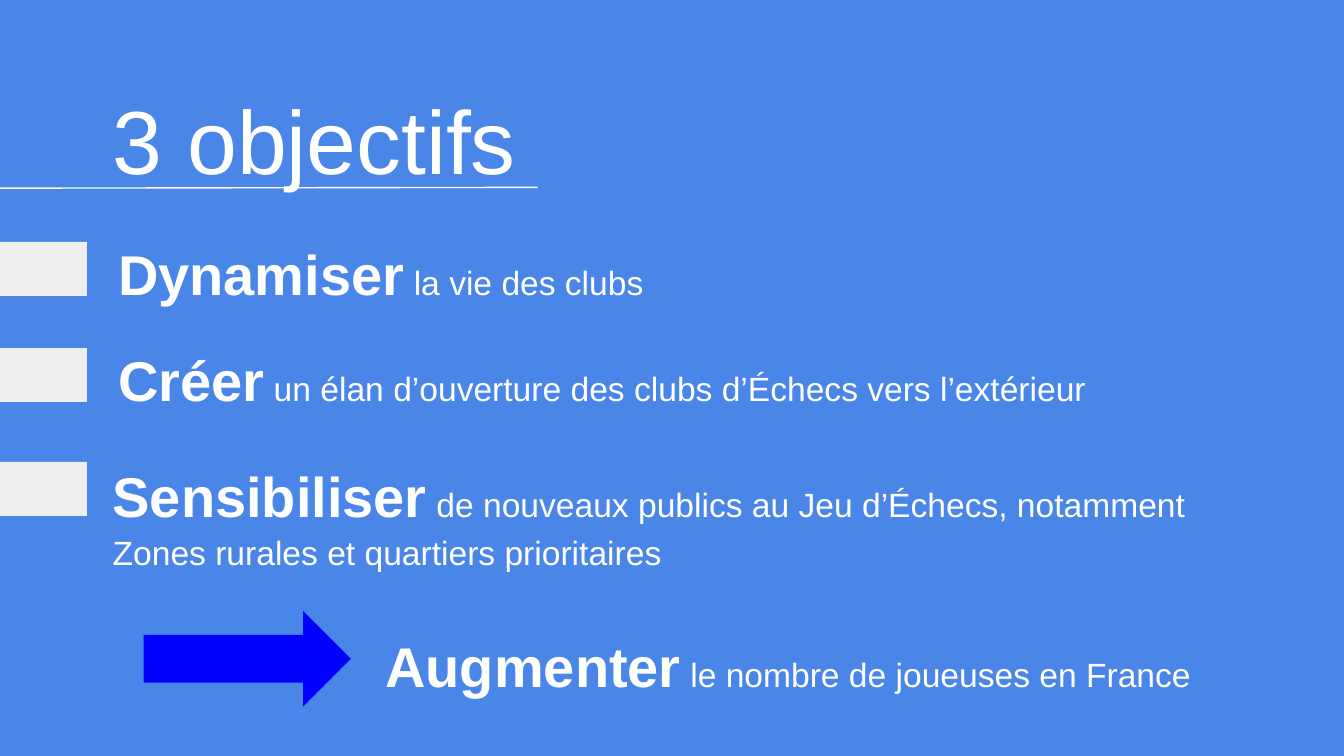
"""Build the "3 objectifs" slide."""
from dataclasses import dataclass

import lxml.etree
import pptx
import pptx.dml.color
import pptx.enum.shapes
import pptx.oxml.ns
import pptx.slide
import pptx.util

Pt = pptx.util.Pt
RGB = pptx.dml.color.RGBColor.from_string
SHAPES = pptx.enum.shapes.MSO_SHAPE


@dataclass(frozen=True)
class Theme:
    """Colours, font and type sizes."""
    background: str = "4A86E8"
    text: str = "FFFFFF"
    marker: str = "EEEEEE"
    arrow: str = "0000FF"
    font: str = "Arial"
    title_size: float = 48
    keyword_size: float = 30
    detail_size: float = 18
    line_spacing: float = 1.1
    inset: float = 7.2


@dataclass(frozen=True)
class Box:
    """A rectangle in points."""
    left: float
    top: float
    width: float
    height: float


@dataclass(frozen=True)
class Objective:
    """A bold keyword followed by its lines of detail."""
    box: Box
    keyword: str
    details: tuple[str, ...]


THEME = Theme()
TITLE_BOX = Box(53.3, 32.4, 316.8, 54)
MARKERS = [Box(0, top, 46.6, 28.9) for top in (129.6, 186.5, 247.5)]
ARROW = Box(77, 327.4, 111, 51)
OBJECTIVES = [
    Objective(Box(56.2, 117.4, 556.6, 43.9), "Dynamiser", (" la vie des clubs",)),
    Objective(Box(56.2, 174.2, 556.6, 43.9), "Créer",
              (" un élan d’ouverture des clubs d’Échecs vers l’extérieur",)),
    Objective(Box(53.3, 236.2, 606.2, 51.1), "Sensibiliser",
              (" de nouveaux publics au Jeu d’Échecs, notamment",
               "Zones rurales et quartiers prioritaires")),
    Objective(Box(199.4, 327.6, 464.4, 43.9), "Augmenter",
              (" le nombre de joueuses en France",)),
]


def add_text_frame(slide: pptx.slide.Slide, box: Box):
    """Add a wrapping text box and return its frame."""
    frame = slide.shapes.add_textbox(
        Pt(box.left), Pt(box.top), Pt(box.width), Pt(box.height)).text_frame
    frame.word_wrap = True
    frame.margin_left = frame.margin_right = Pt(THEME.inset)
    frame.margin_top = frame.margin_bottom = Pt(THEME.inset)
    return frame


def style_paragraph(paragraph, size: float) -> None:
    """Set the shared font, colour and spacing of a paragraph."""
    paragraph.line_spacing = THEME.line_spacing
    paragraph.font.name = THEME.font
    paragraph.font.size = Pt(size)
    paragraph.font.color.rgb = RGB(THEME.text)


def add_title(slide: pptx.slide.Slide, title: str) -> None:
    """Add the title and the rule beneath it."""
    heading = add_text_frame(slide, TITLE_BOX).paragraphs[0]
    heading.text = title
    style_paragraph(heading, THEME.title_size)
    rule = slide.shapes.add_connector(
        pptx.enum.shapes.MSO_CONNECTOR.STRAIGHT, Pt(0), Pt(100.8), Pt(288), Pt(100.4))
    rule.line.color.rgb = RGB(THEME.text)
    rule.line.width = Pt(0.75)
    lxml.etree.SubElement(rule._element.spPr, pptx.oxml.ns.qn("a:effectLst"))


def add_block(slide: pptx.slide.Slide, kind: SHAPES, box: Box, colour: str) -> None:
    """Add a flat filled shape without outline."""
    block = slide.shapes.add_shape(
        kind, Pt(box.left), Pt(box.top), Pt(box.width), Pt(box.height))
    block.shadow.inherit = False
    block.fill.solid()
    block.fill.fore_color.rgb = RGB(colour)
    block.line.fill.background()


def add_objective(slide: pptx.slide.Slide, objective: Objective) -> None:
    """Add one objective with its keyword emphasised."""
    frame = add_text_frame(slide, objective.box)
    for index, detail in enumerate(objective.details):
        paragraph = frame.add_paragraph() if index else frame.paragraphs[0]
        style_paragraph(paragraph, THEME.detail_size)
        if index == 0:
            keyword = paragraph.add_run()
            keyword.text = objective.keyword
            keyword.font.size = Pt(THEME.keyword_size)
            keyword.font.bold = True
        paragraph.add_run().text = detail


def main() -> None:
    """Compose and save the slide."""
    deck = pptx.Presentation()
    deck.slide_width, deck.slide_height = Pt(720), Pt(405)
    slide = deck.slides.add_slide(deck.slide_layouts[6])
    slide.background.fill.solid()
    slide.background.fill.fore_color.rgb = RGB(THEME.background)
    add_title(slide, "3 objectifs")
    for marker in MARKERS:
        add_block(slide, SHAPES.RECTANGLE, marker, THEME.marker)
    add_block(slide, SHAPES.RIGHT_ARROW, ARROW, THEME.arrow)
    for objective in OBJECTIVES:
        add_objective(slide, objective)
    deck.save("out.pptx")


if __name__ == "__main__":
    main()
